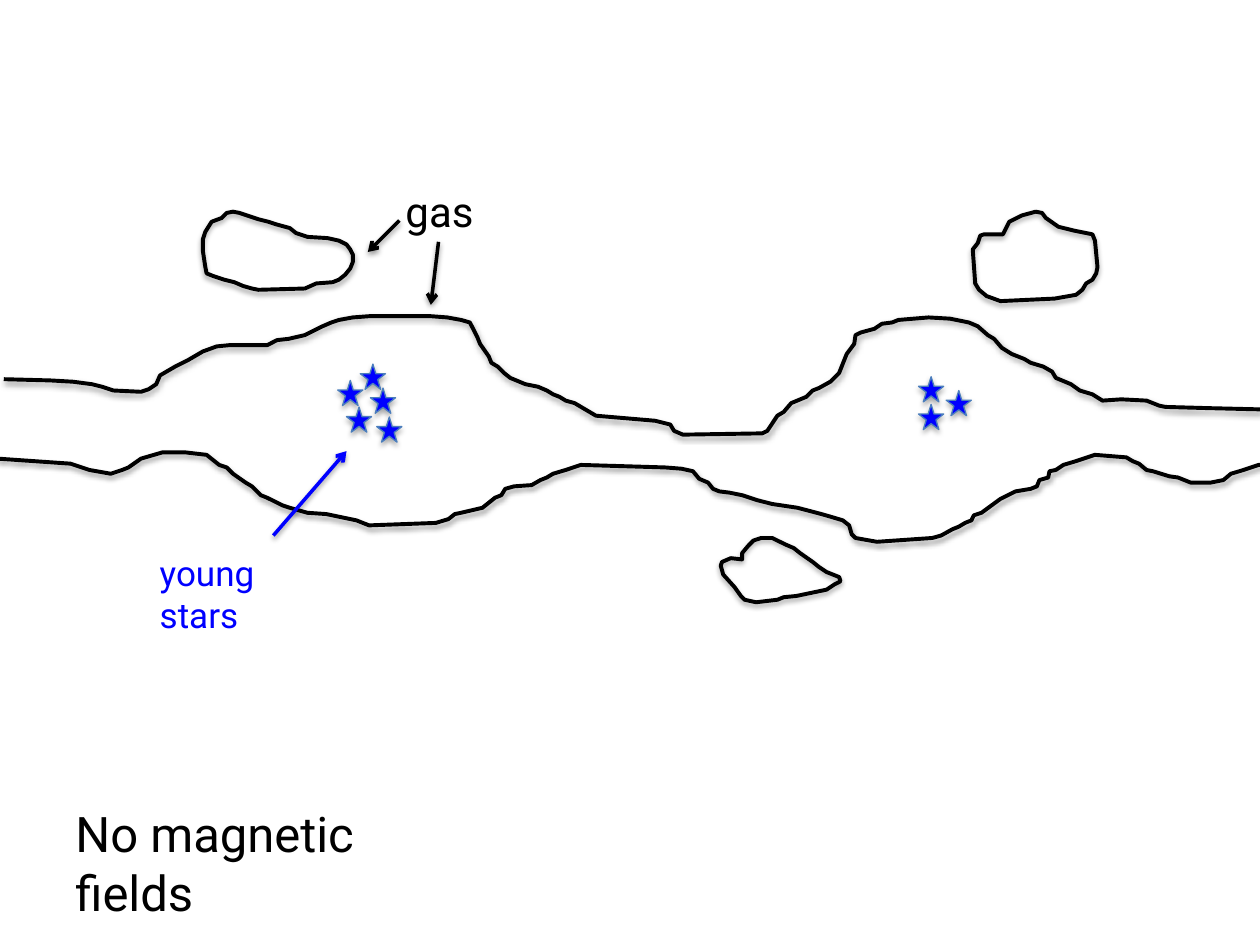
import pptx
import pptx.dml.color
import pptx.enum.shapes
import pptx.enum.text
import pptx.oxml
import pptx.oxml.ns
import pptx.util

Pt = pptx.util.Pt
COLORS = {"black": "000000", "blue": "0000FF", "star_edge": "4B7EBC"}
FONT = "Roboto"
STAR_SIZE = 14.4
GRID = 0.72  # points per outline unit, a hundredth of an inch

STARS = [
    (193, 217.4), (205.9, 208.1), (211.7, 221.8), (198, 232.6), (215.3, 238.3),
    (524.9, 215.3), (524.9, 231.1), (540.7, 223.2),
]

FILAMENT_TOP = [
    (3, 301), (40, 302), (58, 303), (73, 305), (81, 307), (90, 310), (112, 311),
    (118, 309), (124, 305), (127, 298), (139, 291), (149, 286), (161, 279),
    (172, 275), (182, 274), (212, 274), (220, 270), (229, 269), (242, 266),
    (256, 259), (263, 256), (269, 254), (280, 252), (293, 251), (342, 251),
    (355, 252), (366, 254), (373, 256), (379, 268), (381, 273), (388, 283),
    (390, 288), (395, 291), (400, 296), (405, 300), (417, 305), (427, 307),
    (434, 310), (439, 313), (444, 315), (449, 318), (456, 320), (473, 330),
    (520, 334), (532, 337), (535, 342), (542, 345), (605, 344), (609, 342),
    (617, 330), (622, 327), (628, 320), (640, 315), (645, 310), (650, 308),
    (659, 303), (666, 296), (672, 281), (678, 273), (679, 266), (683, 264),
    (694, 261), (700, 257), (708, 256), (713, 254), (737, 252), (754, 253),
    (769, 256), (776, 259), (784, 266), (789, 269), (795, 276), (803, 281),
    (813, 285), (818, 288), (828, 291), (835, 295), (838, 300), (850, 305),
    (857, 310), (867, 313), (875, 318), (890, 317), (910, 318), (920, 322),
    (925, 323), (960, 324), (1001, 325),
]

FILAMENT_BOTTOM = [
    (-2, 364), (56, 368), (71, 373), (88, 376), (97, 373), (102, 371), (112, 364),
    (129, 359), (147, 359), (164, 361), (174, 369), (180, 371), (185, 376),
    (195, 383), (200, 386), (207, 393), (212, 395), (218, 398), (224, 401),
    (230, 403), (244, 407), (259, 408), (283, 413), (293, 417), (346, 415),
    (356, 412), (361, 408), (366, 407), (383, 403), (393, 395), (398, 393),
    (401, 388), (408, 386), (422, 385), (429, 381), (434, 379), (439, 376),
    (449, 373), (461, 369), (528, 371), (541, 372), (550, 374), (555, 380),
    (562, 383), (566, 388), (571, 390), (579, 391), (589, 393), (601, 397),
    (613, 400), (633, 403), (652, 408), (659, 410), (669, 413), (674, 417),
    (676, 424), (679, 427), (696, 430), (740, 427), (747, 425), (756, 420),
    (761, 418), (766, 415), (771, 413), (773, 409), (779, 407), (794, 396),
    (806, 390), (818, 388), (823, 386), (825, 381), (832, 379), (833, 374),
    (838, 373), (844, 369), (854, 366), (869, 361), (894, 363), (899, 366),
    (904, 368), (910, 373), (915, 374), (928, 378), (935, 379), (945, 383),
    (961, 383), (971, 381), (977, 376), (987, 373), (999, 369), (1001, 369),
]

CLOUDS = [
    [
        (168, 176), (163, 184), (161, 190), (161, 199), (163, 212), (164, 217),
        (169, 219), (178, 222), (186, 224), (193, 227), (200, 229), (205, 230),
        (242, 229), (251, 225), (264, 224), (269, 222), (274, 218), (278, 213),
        (280, 208), (280, 202), (278, 198), (275, 194), (269, 191), (260, 189),
        (244, 188), (235, 185), (230, 181), (219, 178), (213, 176), (205, 174),
        (190, 169), (185, 168), (180, 169), (176, 173),
    ],
    [
        (589, 444), (580, 443), (573, 446), (572, 449), (574, 456), (583, 466),
        (588, 473), (591, 476), (600, 478), (617, 476), (622, 474), (632, 473),
        (656, 468), (662, 464), (666, 462), (667, 461), (666, 458), (656, 454),
        (650, 450), (645, 446), (635, 439), (630, 435), (623, 432), (613, 427),
        (604, 427), (598, 429), (594, 433), (589, 439),
    ],
    [
        (796, 186), (781, 186), (778, 187), (776, 193), (772, 198), (774, 225),
        (777, 230), (783, 235), (794, 239), (837, 237), (854, 234), (859, 230),
        (862, 225), (867, 222), (870, 217), (871, 212), (869, 191), (867, 186),
        (862, 185), (852, 183), (840, 180), (830, 173), (827, 169), (822, 168),
        (811, 171), (801, 176),
    ],
]

# text, left, top, width, height, size, colour, right inset
LABELS = [
    ("No magnetic fields", 36, 455.8, 245.5, 41, 28, "black", 18),
    ("gas", 224.6, 102.2, 63.4, 36.7, 24, "black", 7.2),
    ("young stars", 84.2, 311.8, 118.1, 31.7, 20, "blue", 18),
]

# from x, from y, to x, to y, colour
ARROWS = [
    (228.2, 126, 210.2, 144, "black"),
    (250.6, 138.2, 246.2, 174.2, "black"),
    (156.2, 306, 198, 257.8, "blue"),
]


def rgb(name):
    return pptx.dml.color.RGBColor.from_string(COLORS[name])


def set_line(sp, color, width):
    sp.line.color.rgb = rgb(color)
    sp.line.width = Pt(width)


def add_shadow(sp, alpha, distance):
    """Give a shape with a set line a soft shadow straight below it."""
    sp._element.spPr.append(pptx.oxml.parse_xml(
        f'<a:effectLst {pptx.oxml.ns.nsdecls("a")}>'
        f'<a:outerShdw blurRad="{Pt(3.1)}" dist="{Pt(distance)}" dir="5400000" rotWithShape="0">'
        f'<a:srgbClr val="{COLORS["black"]}"><a:alpha val="{alpha * 1000}"/></a:srgbClr>'
        '</a:outerShdw></a:effectLst>'))


def add_star(s, left, top):
    sp = s.shapes.add_shape(pptx.enum.shapes.MSO_SHAPE.STAR_5_POINT,
                            Pt(left), Pt(top), Pt(STAR_SIZE), Pt(STAR_SIZE))
    sp.fill.solid()
    sp.fill.fore_color.rgb = rgb("blue")
    set_line(sp, "star_edge", 0.75)
    add_shadow(sp, 35, 1.8)


def add_outline(s, points, close, alpha, distance):
    builder = s.shapes.build_freeform(*points[0], scale=Pt(GRID))
    builder.add_line_segments(points[1:], close=close)
    sp = builder.convert_to_shape()
    sp.fill.background()
    set_line(sp, "black", 2.25)
    add_shadow(sp, alpha, distance)


def add_label(s, text, left, top, width, height, size, color, right_inset):
    tf = s.shapes.add_textbox(Pt(left), Pt(top), Pt(width), Pt(height)).text_frame
    tf.word_wrap = True
    tf.auto_size = pptx.enum.text.MSO_AUTO_SIZE.NONE
    tf.margin_right = Pt(right_inset)
    tf.text = text
    font = tf.paragraphs[0].runs[0].font
    font.name = FONT
    font.size = Pt(size)
    font.color.rgb = rgb(color)


def add_arrow(s, x1, y1, x2, y2, color):
    sp = s.shapes.add_connector(pptx.enum.shapes.MSO_CONNECTOR.STRAIGHT,
                                Pt(x1), Pt(y1), Pt(x2), Pt(y2))
    set_line(sp, color, 2)
    sp.line._get_or_add_ln().append(pptx.oxml.parse_xml(
        f'<a:tailEnd {pptx.oxml.ns.nsdecls("a")} type="arrow"/>'))
    add_shadow(sp, 38, 1.6)


def main():
    prs = pptx.Presentation()
    prs.slide_width, prs.slide_height = Pt(720), Pt(540)
    s = prs.slides.add_slide(prs.slide_layouts[6])
    for star in STARS:
        add_star(s, *star)
    for edge in (FILAMENT_TOP, FILAMENT_BOTTOM):
        add_outline(s, edge, False, 38, 1.6)
    for cloud in CLOUDS:
        add_outline(s, cloud, True, 35, 1.8)
    for label in LABELS:
        add_label(s, *label)
    for arrow in ARROWS:
        add_arrow(s, *arrow)
    prs.save("out.pptx")


if __name__ == "__main__":
    main()
